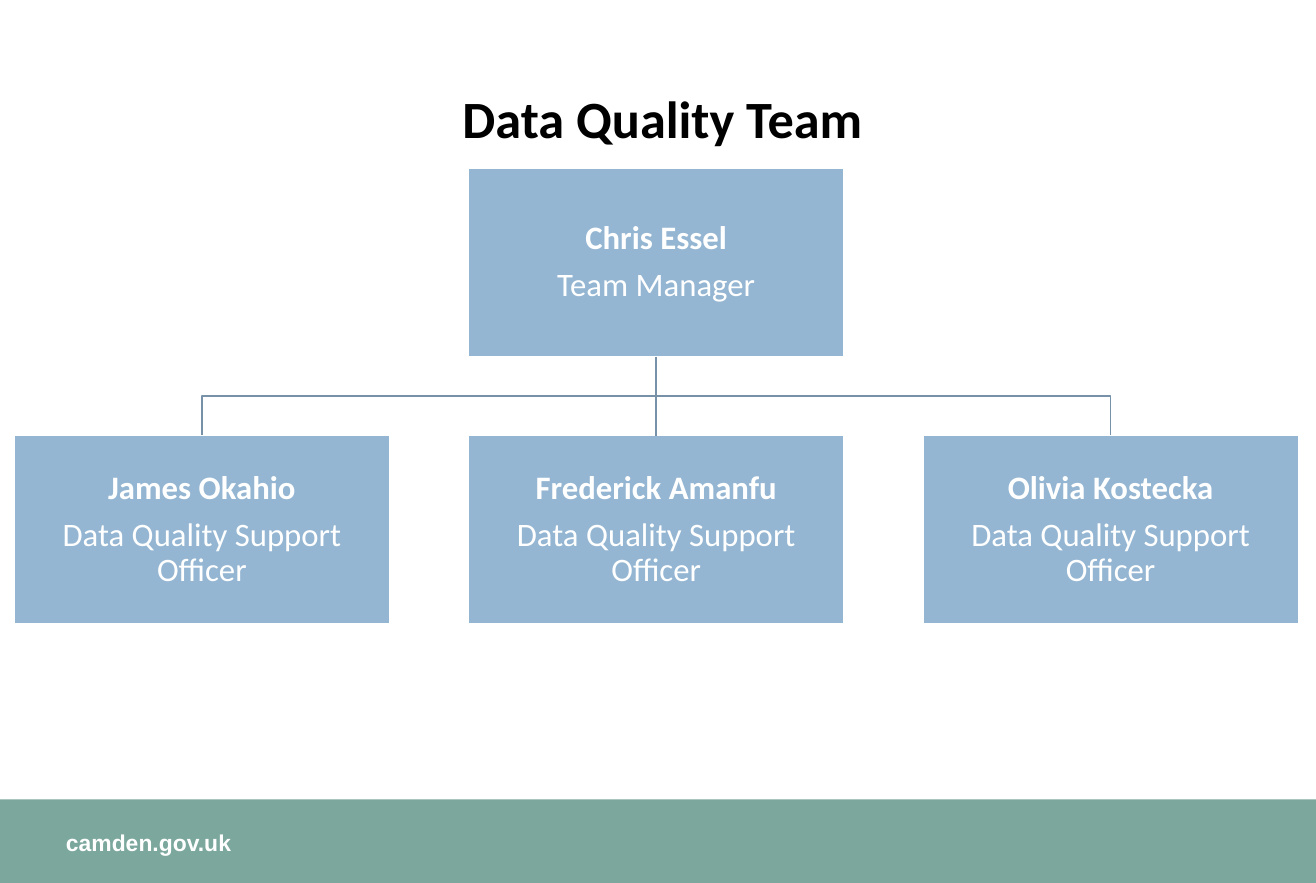
"""Build the Data Quality Team organisation chart slide."""
import pptx
import pptx.util
import pptx.dml.color
import pptx.enum.text
import pptx.enum.shapes
import pptx.oxml

Inches = pptx.util.Inches
Pt = pptx.util.Pt
RGBColor = pptx.dml.color.RGBColor
Align = pptx.enum.text.PP_ALIGN
Anchor = pptx.enum.text.MSO_ANCHOR
Fit = pptx.enum.text.MSO_AUTO_SIZE
Shape = pptx.enum.shapes.MSO_SHAPE
Link = pptx.enum.shapes.MSO_CONNECTOR

WHITE = RGBColor(0xFF, 0xFF, 0xFF)
BLACK = RGBColor(0, 0, 0)
BLUE = RGBColor(0x94, 0xB6, 0xD2)
STEEL = RGBColor(0x77, 0x92, 0xA8)
GREEN = RGBColor(0x7B, 0xA7, 0x9D)

WIDE, HIGH = 3.19, 1.6
LEFT, STEP = 0.12, 3.86
TOP, LOW = 1.43, 3.7
ROLE = "Data Quality Support Officer"
STAFF = ["James Okahio", "Frederick Amanfu", "Olivia Kostecka"]


class Chart:
    """Hold the slide and its style, and draw each kind of element."""

    def __init__(self, slide):
        self.slide = slide
        self.shapes = slide.shapes

    def style(self, item, **values):
        for name, value in values.items():
            setattr(item, name, value)

    def frame(self, frame, lines, inset, anchor, para, font):
        left, top, right, bottom = (Inches(n) for n in inset)
        self.style(frame, word_wrap=True, auto_size=Fit.NONE, vertical_anchor=anchor,
                   margin_left=left, margin_top=top, margin_right=right, margin_bottom=bottom)
        for i, (text, bold) in enumerate(lines):
            part = frame.add_paragraph() if i else frame.paragraphs[0]
            self.style(part, **para)
            run = part.add_run()
            run.text = text
            self.style(run.font, bold=bold, size=font["size"], name=font["name"])
            run.font.color.rgb = font["color"]

    def title(self, text):
        head = self.shapes.title
        self.style(head, left=Inches(0.81), top=Inches(0.62),
                   width=Inches(9.64), height=Inches(0.82))
        self.frame(head.text_frame, [(text, True)], (0.1, 0.05, 0.1, 0.05), Anchor.MIDDLE,
                   {"alignment": Align.CENTER, "line_spacing": 0.9},
                   {"size": Pt(32), "name": "Calibri", "color": BLACK})

    def rect(self, left, top, width, height, fill, line=None):
        rect = self.shapes.add_shape(Shape.RECTANGLE, Inches(left), Inches(top),
                                     Inches(width), Inches(height))
        rect.shadow.inherit = False
        rect.fill.solid()
        rect.fill.fore_color.rgb = fill
        if line is None:
            rect.line.fill.background()
        else:
            self.pen(rect, line)
        return rect

    def pen(self, item, color):
        item.line.color.rgb = color
        item.line.width = Pt(1)

    def person(self, left, top, name, role):
        box = self.rect(left, top, WIDE, HIGH, BLUE, WHITE)
        self.frame(box.text_frame, [(name, True), (role, False)], (0.01,) * 4, Anchor.MIDDLE,
                   {"alignment": Align.CENTER, "line_spacing": 0.9, "space_after": Pt(7)},
                   {"size": Pt(20), "name": "Calibri", "color": WHITE})
        return box

    def elbow(self, start, end):
        mid = (start[1] + end[1]) / 2
        route = [(start[0], mid), (end[0], mid), end]
        form = self.shapes.build_freeform(Inches(start[0]), Inches(start[1]))
        form.add_line_segments([(Inches(x), Inches(y)) for x, y in route], close=False)
        line = form.convert_to_shape()
        line.shadow.inherit = False
        line.fill.background()
        self.pen(line, STEEL)

    def join(self, upper, lower):
        line = self.shapes.add_connector(Link.STRAIGHT, 0, 0, 0, 0)
        line.begin_connect(upper, 2)
        line.end_connect(lower, 0)
        self.pen(line, STEEL)
        line._element.spPr.append(pptx.oxml.parse_xml(
            '<a:effectLst xmlns:a="http://schemas.openxmlformats.org/drawingml/2006/main"/>'))

    def footer(self, text):
        self.rect(0, 6.79, 11.18, 0.71, GREEN)
        box = self.shapes.add_textbox(Inches(0.56), Inches(7.04), Inches(4.61), Inches(0.24))
        self.frame(box.text_frame, [(text, True)], (0, 0, 0.1, 0), Anchor.TOP,
                   {"alignment": Align.LEFT},
                   {"size": Pt(14), "name": "Arial", "color": WHITE})


def main():
    deck = pptx.Presentation()
    deck.slide_width, deck.slide_height = Inches(11.18), Inches(7.5)
    chart = Chart(deck.slides.add_slide(deck.slide_layouts[5]))
    chart.footer("camden.gov.uk")
    chart.title("Data Quality Team")
    lefts = [LEFT + STEP * i for i in range(len(STAFF))]
    start = (lefts[1] + WIDE / 2, TOP + HIGH)
    for left in (lefts[2], lefts[0]):
        chart.elbow(start, (left + WIDE / 2, LOW))
    lead = chart.person(lefts[1], TOP, "Chris Essel", "Team Manager")
    team = [chart.person(left, LOW, name, ROLE) for left, name in zip(lefts, STAFF)]
    chart.join(lead, team[1])
    deck.save("out.pptx")


if __name__ == "__main__":
    main()
